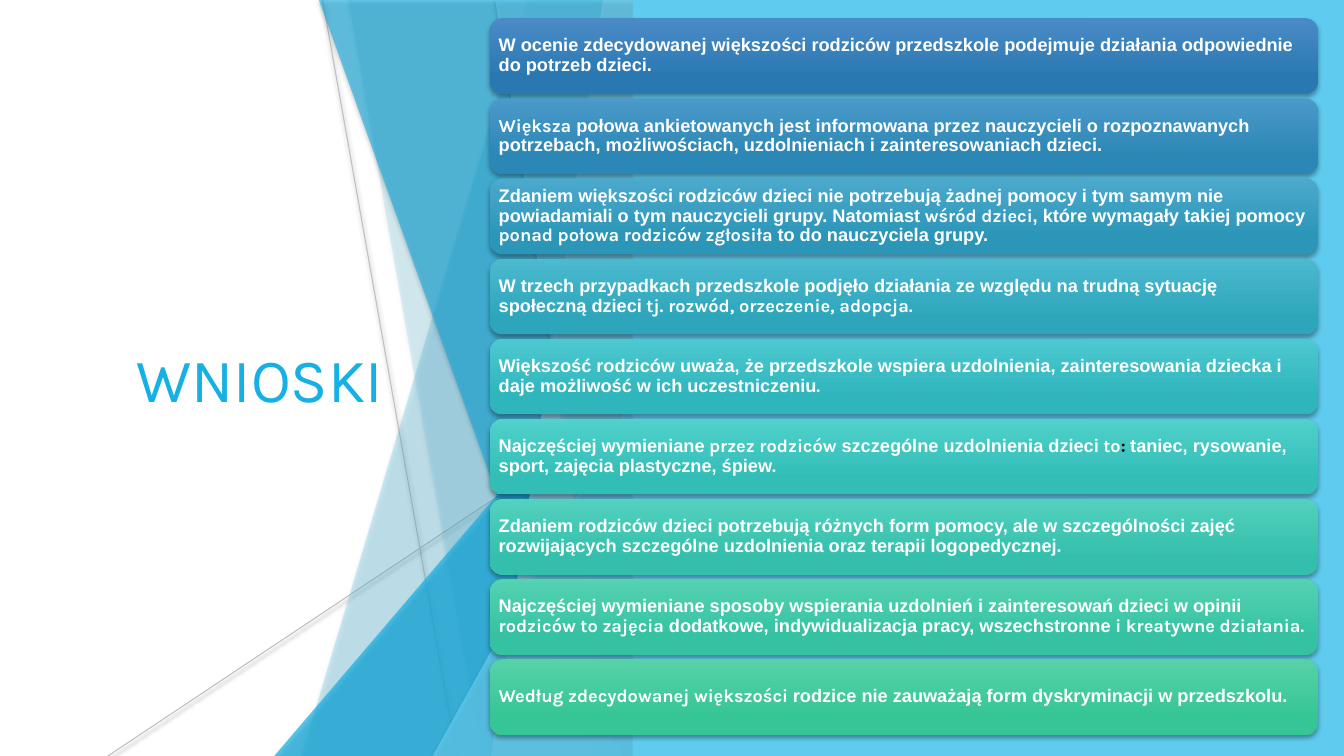
from pptx import Presentation
from pptx.dml.color import RGBColor
from pptx.enum import shapes, text
from pptx.oxml import parse_xml
from pptx.oxml.ns import nsdecls, qn
from pptx.util import Inches, Pt

ARIAL, KARLA = "Arial", "Karla"
WHITE, BLACK, SKY, BLUE = "FFFFFF", "010000", "5FCBEF", "17B0E4"
TITLE = "WNIOSKI "
SPLIT_X, SLIDE_W, SLIDE_H = 6.28, 13.33, 7.5

RAYS = [((3.2, 0), (4.53, 7.5)), ((6.28, 4.03), (1.07, 7.5))]
FACETS = [
    ("band", 5.23, 2.99, SKY, 30),
    ("band", 3.45, 4.78, SKY, 20),
    ("triangle", 2.72, 3.33, BLUE, 72),
    ("band", 3.16, 5.86, BLUE, 60),
    ("band", 5.98, 4.87, "9FE0F5", 70),
    ("band", 4.91, 6.13, SKY, 65),
    ("triangle", 4.29, 3.93, SKY, 80),
]
CARDS = [
    ("4A8BC6", "2A78B2", [
        ("W ocenie zdecydowanej większości rodziców przedszkole podejmuje działania "
         "odpowiednie do potrzeb dzieci.", ARIAL, WHITE)]),
    ("4B9AC9", "2B87B5", [
        ("Większa", KARLA, WHITE),
        (" połowa ankietowanych jest informowana przez nauczycieli o rozpoznawanych "
         "potrzebach, możliwościach, uzdolnieniach i zainteresowaniach dzieci.", ARIAL, WHITE)]),
    ("4BA9CC", "2C96B8", [
        ("Zdaniem większości rodziców dzieci nie potrzebują żadnej pomocy i tym samym nie "
         "powiadamiali o tym nauczycieli grupy. Natomiast ", ARIAL, WHITE),
        ("wśród dzieci", KARLA, WHITE),
        (", które wymagały takiej pomocy ", ARIAL, WHITE),
        ("ponad połowa rodziców zgłosiła", KARLA, WHITE),
        (" to do nauczyciela grupy.", ARIAL, WHITE)]),
    ("4CB9CF", "2DA6BB", [
        ("W trzech przypadkach przedszkole podjęło działania ze względu na trudną sytuację "
         "społeczną dzieci", ARIAL, WHITE),
        (" tj. rozwód, orzeczenie, adopcja.", KARLA, WHITE)]),
    ("4DC8D0", "2FB5BC", [
        ("Większość rodziców uważa, że przedszkole wspiera uzdolnienia, zainteresowania "
         "dziecka i daje możliwość w ich uczestniczeniu", ARIAL, WHITE),
        (".", KARLA, WHITE)]),
    ("50D1CB", "33BDB7", [
        ("Najczęściej wymieniane", ARIAL, WHITE),
        (" przez rodziców", KARLA, WHITE),
        (" szczególne uzdolnienia dzieci", ARIAL, WHITE),
        (" to", KARLA, WHITE),
        (": ", KARLA, BLACK),
        ("taniec, rysowanie, sport, zajęcia plastyczne, śpiew", ARIAL, WHITE),
        (".", KARLA, WHITE)]),
    ("52D1BE", "34BFAC", [
        ("Zdaniem rodziców dzieci potrzebują różnych form pomocy, ale w szczególności zajęć "
         "rozwijających szczególne uzdolnienia oraz terapii logopedycznej.", ARIAL, WHITE)]),
    ("54D2B2", "35C2A2", [
        ("Najczęściej wymieniane sposoby wspierania uzdolnień i zainteresowań dzieci w opinii ",
         ARIAL, WHITE),
        ("rodziców to zajęcia", KARLA, WHITE),
        (" dodatkowe, indywidualizacja pracy, wszechstronne ", ARIAL, WHITE),
        ("i kreatywne działania.", KARLA, WHITE)]),
    ("56D2A7", "36C596", [
        ("Według zdecydowanej większości", KARLA, WHITE),
        (" rodzice nie zauważają form dyskryminacji w przedszkolu.", ARIAL, WHITE)]),
]
CARD_X, CARD_Y, CARD_W, CARD_H, CARD_STEP = 4.86, 0.18, 8.21, 0.75, 0.795


def rgb(color):
    return RGBColor.from_string(color)


def box(*lengths):
    return [Inches(v) for v in lengths]


def add_shadow(shape, alpha=35, blur=3, dist=2):
    shape._element.spPr.append(parse_xml(
        f'<a:effectLst {nsdecls("a")}><a:outerShdw blurRad="{Pt(blur)}" dist="{Pt(dist)}" '
        f'dir="5400000" rotWithShape="0"><a:srgbClr val="000000">'
        f'<a:alpha val="{alpha * 1000}"/></a:srgbClr></a:outerShdw></a:effectLst>'))


def fill_solid(shape, color, opacity=100):
    shape.fill.solid()
    shape.fill.fore_color.rgb = rgb(color)
    shape.line.fill.background()
    if opacity < 100:
        clr = shape._element.spPr.find(qn("a:solidFill")).find(qn("a:srgbClr"))
        clr.append(parse_xml(f'<a:alpha {nsdecls("a")} val="{opacity * 1000}"/>'))


def style_run(r, font, size, color, bold):
    r.font.name, r.font.size, r.font.bold = font, Pt(size), bold
    r.font.color.rgb = rgb(color)


def add_ray(s, start, end):
    ray = s.shapes.add_connector(shapes.MSO_CONNECTOR.STRAIGHT, *box(*start, *end))
    ray.line.color.rgb = rgb("BFBFBF")
    ray.line.width = Pt(0.75)
    add_shadow(ray, 38, 3.1, 1.6)


def add_facet(s, kind, a, b, color, opacity):
    if kind == "triangle":
        sp = s.shapes.add_shape(shapes.MSO_SHAPE.ISOSCELES_TRIANGLE,
                                *box(a, b, SPLIT_X - a, SLIDE_H - b))
        sp.adjustments[0] = 1
    else:
        outline = s.shapes.build_freeform(*box(a, -0.01))
        outline.add_line_segments([box(SPLIT_X, -0.01), box(SPLIT_X, SLIDE_H), box(b, SLIDE_H)])
        sp = outline.convert_to_shape()
    fill_solid(sp, color, opacity)
    add_shadow(sp)


def add_title(s):
    title = s.shapes.title
    s.shapes._spTree.append(title._element)
    title.left, title.top, title.width, title.height = box(0.71, 1.51, 3.88, 4.48)
    tf = title.text_frame
    tf.text = TITLE
    tf.vertical_anchor = text.MSO_ANCHOR.MIDDLE
    p = tf.paragraphs[0]
    p.alignment = text.PP_ALIGN.CENTER
    style_run(p.runs[0], KARLA, 44, BLUE, False)


def add_card(s, row, top_color, bottom_color, runs):
    sp = s.shapes.add_shape(shapes.MSO_SHAPE.ROUNDED_RECTANGLE,
                            *box(CARD_X, CARD_Y + row * CARD_STEP, CARD_W, CARD_H))
    sp.fill.gradient()
    sp.fill.gradient_angle = 270
    stops = zip(sp.fill.gradient_stops, (top_color, bottom_color), (0, 0.78))
    for stop, color, position in stops:
        stop.color.rgb = rgb(color)
        stop.position = position
    sp.line.fill.background()
    add_shadow(sp)
    tf = sp.text_frame
    tf.word_wrap = True
    tf.vertical_anchor = text.MSO_ANCHOR.MIDDLE
    tf.margin_left = tf.margin_right = tf.margin_top = tf.margin_bottom = Inches(0.05)
    p = tf.paragraphs[0]
    p.alignment = text.PP_ALIGN.LEFT
    p.line_spacing = 0.9
    for words, font, color in runs:
        r = p.add_run()
        r.text = words
        style_run(r, font, 13, color, True)


def main():
    prs = Presentation()
    prs.slide_width, prs.slide_height = box(SLIDE_W, SLIDE_H)
    s = prs.slides.add_slide(prs.slide_layouts[5])
    for start, end in RAYS:
        add_ray(s, start, end)
    for facet in FACETS:
        add_facet(s, *facet)
    add_title(s)
    panel = s.shapes.add_shape(shapes.MSO_SHAPE.RECTANGLE,
                               *box(SPLIT_X, 0, SLIDE_W - SPLIT_X, SLIDE_H))
    fill_solid(panel, SKY)
    panel.shadow.inherit = False
    for row, card in enumerate(CARDS):
        add_card(s, row, *card)
    prs.save("out.pptx")


if __name__ == "__main__":
    main()
